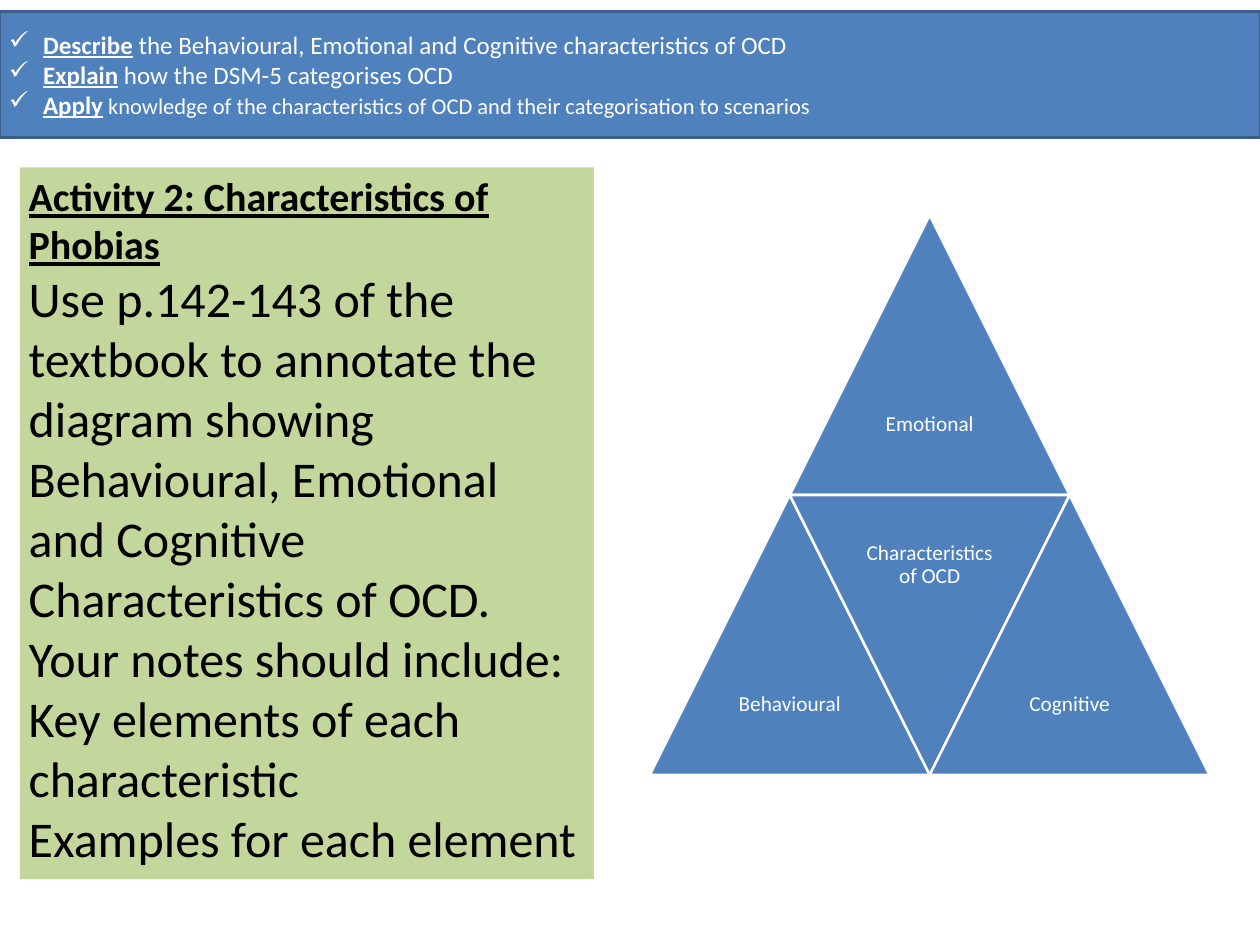
from lxml import etree
from pptx import Presentation
from pptx.dml.color import RGBColor
from pptx.enum import shapes, text
from pptx.oxml import ns
from pptx.util import Inches, Pt

WHITE = RGBColor(0xFF, 0xFF, 0xFF)
BLACK = RGBColor(0, 0, 0)
BLUE = RGBColor(0x4F, 0x81, 0xBD)
DARK_BLUE = RGBColor(0x3A, 0x5F, 0x8C)
GREEN = RGBColor(0xC3, 0xD6, 0x9B)

HEADING = {"bold": True, "underline": True}

OBJECTIVES = [
    ("Describe", " the Behavioural, Emotional and Cognitive characteristics of OCD", 20),
    ("Explain", " how the DSM-5 categorises OCD", 20),
    ("Apply", " knowledge of the characteristics of OCD and their categorisation to scenarios", 18),
]
ACTIVITY_TITLE = "Activity 2: Characteristics of Phobias"
ACTIVITY_STEPS = [
    "Use p.142-143 of the textbook to annotate the diagram showing Behavioural, "
    "Emotional and Cognitive Characteristics of OCD. Your notes should include:",
    "Key elements of each characteristic",
    "Examples for each element",
]

SIDE = 3.11
PYRAMID_LEFT, PYRAMID_TOP = 7.22, 2.39
# label, column in half sides, row, points down
TRIANGLES = [
    ("Emotional", 1, 0, False),
    ("Behavioural", 0, 1, False),
    ("Characteristics of OCD", 1, 1, True),
    ("Cognitive", 2, 1, False),
]


class SlideBuilder:
    font_name = "Calibri"

    def __init__(self, page):
        self.page = page

    def shape(self, kind, place, fill, line=None):
        shape = self.page.shapes.add_shape(kind, *map(Inches, place))
        shape.shadow.inherit = False
        shape.fill.solid()
        shape.fill.fore_color.rgb = fill
        if line is None:
            shape.line.fill.background()
        else:
            shape.line.color.rgb = line
            shape.line.width = Pt(2)
        return shape

    def fill_text(self, box, paragraphs, color, align=text.PP_ALIGN.LEFT,
                  anchor=text.MSO_ANCHOR.TOP, bullet=None, spacing=None):
        """Fill a box; each paragraph is a list of (words, size, format) spans."""
        frame = box.text_frame
        frame.word_wrap = True
        frame.vertical_anchor = anchor
        for index, spans in enumerate(paragraphs):
            para = frame.add_paragraph() if index else frame.paragraphs[0]
            para.alignment = align
            para.line_spacing = spacing
            if bullet:
                self.add_bullet(para, bullet)
            for words, size, style in spans:
                span = para.add_run()
                span.text = words
                span.font.color.rgb = color
                values = {"name": self.font_name, "size": Pt(size), **style}
                for name, value in values.items():
                    setattr(span.font, name, value)
        return frame

    def add_bullet(self, para, mark):
        props = para._p.get_or_add_pPr()
        props.set("marL", str(Inches(0.38)))
        props.set("indent", str(-Inches(0.38)))
        etree.SubElement(props, ns.qn("a:buChar")).set("char", mark)

    def triangle(self, label, left, top, points_down):
        shape = self.shape(shapes.MSO_SHAPE.ISOSCELES_TRIANGLE,
                           (left, top, SIDE, SIDE), BLUE, WHITE)
        shape.rotation = 180 if points_down else 0
        half = SIDE / 2
        label_top = top if points_down else top + half
        box = self.page.shapes.add_textbox(
            *map(Inches, (left + half / 2, label_top, half, half)))
        frame = self.fill_text(box, [[(label, 17, {})]], WHITE, text.PP_ALIGN.CENTER,
                               text.MSO_ANCHOR.MIDDLE, spacing=0.9)
        for edge in ("left", "top", "right", "bottom"):
            setattr(frame, f"margin_{edge}", Inches(0.07))


def main():
    deck = Presentation()
    deck.slide_width, deck.slide_height = Inches(14), Inches(10.5)
    slide = SlideBuilder(deck.slides.add_slide(deck.slide_layouts[6]))

    activity = slide.shape(shapes.MSO_SHAPE.RECTANGLE, (0.22, 1.86, 6.38, 7.91), GREEN)
    steps = [[(step, 40, {})] for step in ACTIVITY_STEPS]
    slide.fill_text(activity, [[(ACTIVITY_TITLE, 32, HEADING)], *steps], BLACK)

    for label, column, row, points_down in TRIANGLES:
        slide.triangle(label, PYRAMID_LEFT + column * SIDE / 2,
                       PYRAMID_TOP + row * SIDE, points_down)

    banner = slide.shape(shapes.MSO_SHAPE.RECTANGLE, (0, 0.13, 14, 1.4), BLUE, DARK_BLUE)
    objectives = [[(verb, 20, HEADING), (rest, size, {})]
                  for verb, rest, size in OBJECTIVES]
    slide.fill_text(banner, objectives, WHITE, anchor=text.MSO_ANCHOR.MIDDLE, bullet="✓")

    deck.save("out.pptx")


if __name__ == "__main__":
    main()
